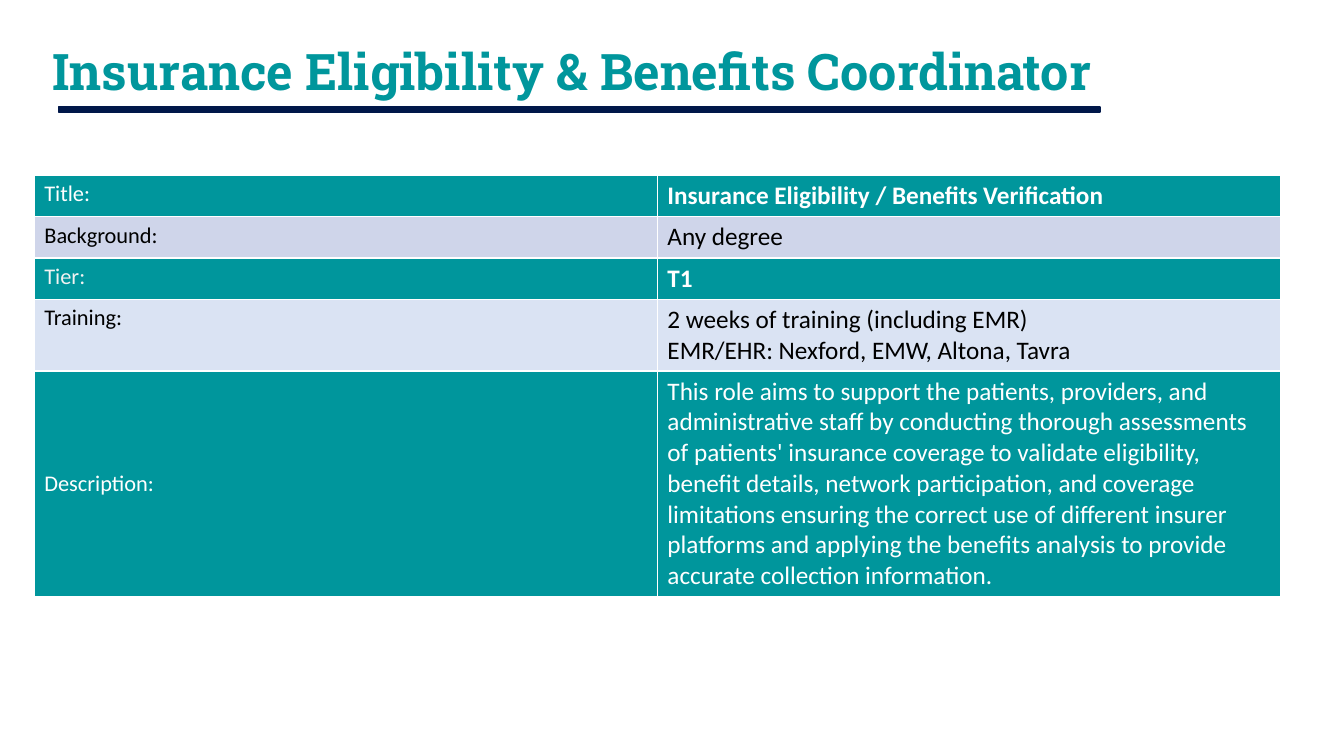
"""Build the coordinator role slide with its title, rule and facts table."""
import dataclasses

import pptx
import pptx.dml.color
import pptx.enum.shapes
import pptx.enum.text
import pptx.util

Inches = pptx.util.Inches
Pt = pptx.util.Pt
Anchor = pptx.enum.text.MSO_ANCHOR

COLORS = {
    "teal": "00969C",
    "navy": "001749",
    "white": "FFFFFF",
    "pale": "F2F2F2",
    "black": "000000",
    "gray": "CFD5EA",
    "sky": "DAE3F3",
}


@dataclasses.dataclass
class Fact:
    label: str
    value: str
    fill: str
    label_ink: str
    ink: str
    bold: bool = False
    anchor: Anchor = Anchor.TOP


FACTS = [
    Fact("Title:", "Insurance Eligibility / Benefits Verification",
         "teal", "white", "white", bold=True),
    Fact("Background:", "Any degree", "gray", "black", "black"),
    Fact("Tier:", "T1", "teal", "pale", "white", bold=True),
    Fact("Training:",
         "2 weeks of training (including EMR)\n"
         "EMR/EHR: Nexford, EMW, Altona, Tavra",
         "sky", "black", "black"),
    Fact("Description:",
         "This role aims to support the patients, providers, and "
         "administrative staff by conducting thorough assessments of "
         "patients' insurance coverage to validate eligibility, benefit "
         "details, network participation, and coverage limitations ensuring "
         "the correct use of different insurer platforms and applying the "
         "benefits analysis to provide accurate collection information.",
         "teal", "white", "white", anchor=Anchor.MIDDLE),
]


def color(name: str) -> pptx.dml.color.RGBColor:
    return pptx.dml.color.RGBColor.from_string(COLORS[name])


def style(font, size: int, ink: str, bold: bool, face: str = "Calibri") -> None:
    font.name = face
    font.size = Pt(size)
    font.bold = bold
    font.color.rgb = color(ink)


def add_title(slide) -> None:
    title = slide.shapes.title
    title.left, title.top = Inches(0.42), Inches(0)
    title.width, title.height = Inches(11.27), Inches(1.48)
    frame = title.text_frame
    frame.text = "Insurance Eligibility & Benefits Coordinator"
    frame.auto_size = pptx.enum.text.MSO_AUTO_SIZE.NONE
    frame.vertical_anchor = Anchor.MIDDLE
    line = frame.paragraphs[0]
    line.alignment = pptx.enum.text.PP_ALIGN.LEFT
    line.line_spacing = 0.9
    style(line.font, 36, "teal", True, "Roboto Slab")


def add_rule(slide) -> None:
    rule = slide.shapes.add_shape(
        pptx.enum.shapes.MSO_SHAPE.RECTANGLE,
        Inches(0.58), Inches(1.06), Inches(10.33), Inches(0.05))
    rule.shadow.inherit = False
    rule.fill.solid()
    rule.fill.fore_color.rgb = color("navy")
    rule.line.color.rgb = color("navy")
    rule.line.width = Pt(1)


def fill_cell(cell, text: str, fill: str, size: int, ink: str,
              bold: bool, anchor: Anchor) -> None:
    cell.fill.solid()
    cell.fill.fore_color.rgb = color(fill)
    cell.vertical_anchor = anchor
    cell.text_frame.text = text
    for line in cell.text_frame.paragraphs:
        style(line.font, size, ink, bold)


def add_facts(slide) -> None:
    frame = slide.shapes.add_table(
        len(FACTS), 2, Inches(0.34), Inches(1.74), Inches(12.36), Inches(4.12))
    table = frame.table
    for row, fact in zip(table.rows, FACTS):
        row.height = Inches(0.41)
        label, value = row.cells
        fill_cell(label, fact.label, fact.fill, 16, fact.label_ink,
                  False, fact.anchor)
        fill_cell(value, fact.value, fact.fill, 18, fact.ink,
                  fact.bold, Anchor.TOP)
    frame.height = Inches(4.12)


def main() -> None:
    deck = pptx.Presentation()
    deck.slide_width, deck.slide_height = Inches(13.33), Inches(7.5)
    slide = deck.slides.add_slide(deck.slide_layouts[5])
    add_title(slide)
    add_rule(slide)
    add_facts(slide)
    deck.save("out.pptx")


if __name__ == "__main__":
    main()
